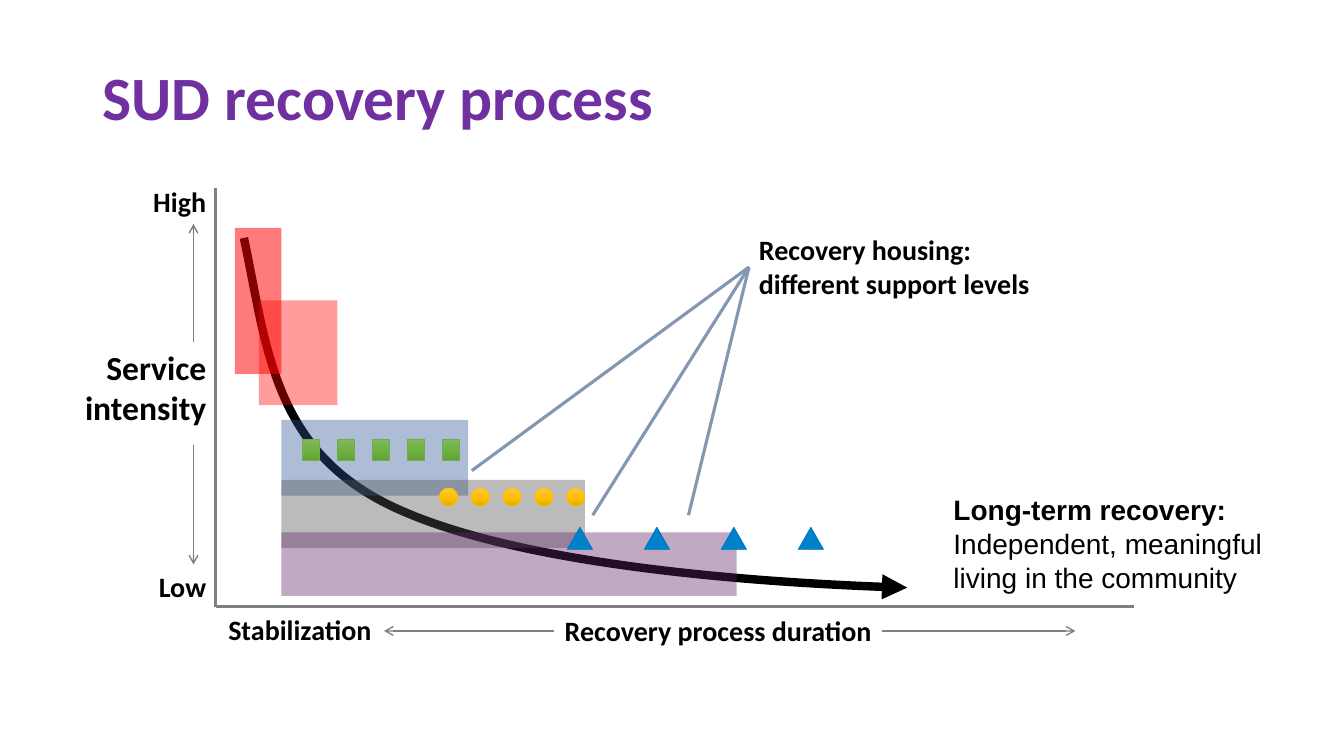
from dataclasses import dataclass
from lxml.etree import SubElement as Sub
from copy import deepcopy
from pptx import Presentation
from pptx.dml.color import RGBColor as RGB
from pptx.enum.shapes import MSO_CONNECTOR as Conn, MSO_SHAPE as Kind
from pptx.enum.text import MSO_ANCHOR as Anchor, PP_ALIGN as Align
from pptx.oxml.ns import qn
from pptx.util import Pt


@dataclass(frozen=True)
class Theme:
    font: str = "Calibri"
    plain: str = "Arial"
    head: int = 44
    large: int = 24
    base: int = 20
    title: str = "7030A0"
    ink: str = "000000"
    axis: str = "808080"
    link: str = "8497B0"
    red: str = "FF0000"
    blue: str = "2F5597"
    gray: str = "525252"
    plum: str = "632466"
    green: tuple = ("81B861", "6FB242", "62A336")
    gold: tuple = ("FFC64B", "FFC000", "E3AB00")
    sky: tuple = ("0082CA",)
    rims: tuple = ("70AD47", "FFC000", "0070C0")


def write(para, text, size, color, font, bold=True, align=Align.LEFT):
    """Put one formatted run into a paragraph."""
    para.alignment = align
    run = para.add_run()
    run.text = text
    face = run.font
    face.name, face.size, face.bold = font, Pt(size), bold
    face.color.rgb = RGB.from_string(color)


class Board:
    def __init__(self, slide, theme):
        self.slide, self.theme = slide, theme
        self.shapes = slide.shapes

    def title(self, text, x, y, w, h):
        box = self.shapes.title
        box.left, box.top, box.width, box.height = map(Pt, (x, y, w, h))
        frame = box.text_frame
        frame.vertical_anchor = Anchor.MIDDLE
        para = frame.paragraphs[0]
        para.line_spacing = 0.9
        write(para, text, self.theme.head, self.theme.title, self.theme.font)

    def label(self, lines, x, y, w, h, size=None, font=None, align=Align.LEFT):
        """Text box; the first line is bold, any later one is regular."""
        frame = self.shapes.add_textbox(*map(Pt, (x, y, w, h))).text_frame
        frame.word_wrap = True
        for i, text in enumerate(lines):
            para = frame.add_paragraph() if i else frame.paragraphs[0]
            write(para, text, size or self.theme.base, self.theme.ink,
                  font or self.theme.font, bold=i == 0, align=align)

    def stroke(self, shape, color, width, tip=None):
        shape.line.color.rgb = RGB.from_string(color)
        shape.line.width = Pt(width)
        if tip:
            Sub(shape._element.spPr.find(qn("a:ln")), qn("a:tailEnd"), type=tip)

    def line(self, start, end, color, width, tip=None):
        link = self.shapes.add_connector(Conn.STRAIGHT, *map(Pt, start + end))
        self.stroke(link, color, width, tip)
        Sub(link._element.spPr, qn("a:effectLst"))

    def curve(self, points, color, width, tip):
        first, *rest = [(Pt(x), Pt(y)) for x, y in points]
        pen = self.shapes.build_freeform(*first, scale=1.0)
        pen.add_line_segments(rest, close=False)
        shape = pen.convert_to_shape()
        shape.shadow.inherit = False
        shape.fill.background()
        self.stroke(shape, color, width, tip)
        # Each three straight segments become one cubic segment
        track = shape._element.spPr.find(".//" + qn("a:path"))
        legs = track.findall(qn("a:lnTo"))
        for i in range(0, len(legs), 3):
            cubic = Sub(track, qn("a:cubicBezTo"))
            for leg in legs[i:i + 3]:
                cubic.append(leg[0])
                track.remove(leg)

    def band(self, x, y, w, h, color, alpha=39):
        box = self.shapes.add_shape(Kind.RECTANGLE, *map(Pt, (x, y, w, h)))
        box.shadow.inherit = False
        box.line.fill.background()
        box.fill.solid()
        box.fill.fore_color.rgb = RGB.from_string(color)
        tint = box._element.spPr.find(".//" + qn("a:srgbClr"))
        Sub(tint, qn("a:alpha"), val=str(alpha * 1000))

    def marks(self, kind, count, x, y, w, h, step, fill, rim):
        """Group of equally spaced marks."""
        group = self.shapes.add_group_shape()
        for i in range(count):
            mark = group.shapes.add_shape(
                kind, *map(Pt, (x + i * step, y, w, h)))
            mark.shadow.inherit = False
            self.paint(mark, fill)
            self.stroke(mark, rim, 0.5)

    def paint(self, shape, colors):
        """Solid fill for one colour, top-down gradient for three."""
        if len(colors) == 1:
            shape.fill.solid()
            shape.fill.fore_color.rgb = RGB.from_string(colors[0])
            return
        shape.fill.gradient()
        shape.fill.gradient_angle = 270
        stops = shape._element.spPr.find(".//" + qn("a:gsLst"))
        stops.insert(1, deepcopy(stops[0]))
        for i, stop in enumerate(shape.fill.gradient_stops):
            stop.position = i / 2
            stop.color.rgb = RGB.from_string(colors[i])


def main():
    deck = Presentation()
    deck.slide_width, deck.slide_height = Pt(960), Pt(540)
    look = Theme()
    board = Board(deck.slides.add_slide(deck.slide_layouts[5]), look)

    # Title and outcome
    board.title("SUD recovery process", 66, 10, 828, 123)
    board.label(["Long-term recovery:",
                 "Independent, meaningful living in the community"],
                674, 348.5, 272, 80, font=look.plain)

    # Recovery curve
    board.curve([(174.2, 170), (190, 243.4), (193.7, 316), (272.2, 357.8),
                 (351.4, 399.6), (525.6, 416.2), (648, 419.8)],
                look.ink, 6, "triangle")

    # Axes
    base = (154.2, 433.4)
    for end in ((154.2, 134.6), (810, 433.4)):
        board.line(base, end, look.axis, 2.25)

    # Service bands
    for band in ((185, 214.6, 56, 74.8, look.red),
                 (201, 300, 133.3, 54, look.blue),
                 (201, 342.8, 216.7, 48.5, look.gray),
                 (201, 380.2, 325.2, 45.5, look.plum),
                 (167.8, 162.7, 33.2, 104.3, look.red, 52)):
        board.band(*band)

    # Axis labels
    board.label(["Service intensity"], 46, 244, 108.5, 68,
                size=look.large, align=Align.RIGHT)
    for text, y in (("High", 128.2), ("Low", 403.2)):
        board.label([text], 94.3, y, 60, 31.5, align=Align.RIGHT)
    board.label(["Recovery process duration"], 317.5, 434.8, 391, 31.5,
                align=Align.CENTER)
    board.label(["Stabilization"], 147.6, 433.6, 133.2, 31.5,
                align=Align.CENTER)

    # Housing callout
    board.label(["Recovery housing: different support levels"],
                535, 162.7, 209.5, 55.5)
    for end in ((491.8, 368), (337, 336.2), (423.4, 368)):
        board.line((535, 190.8), end, look.link, 2.25)

    # Direction arrows
    for start, end in (((138.2, 244), (138.2, 160)),
                       ((138.2, 318.2), (138.2, 403.2)),
                       ((396, 450.7), (274.3, 450.7)),
                       ((630, 450.7), (768.2, 450.7))):
        board.line(start, end, look.axis, 1, "arrow")

    # Support levels
    green, gold, sky = look.rims
    board.marks(Kind.RECTANGLE, 5, 216, 314, 12.2, 15, 25.05, look.green, green)
    board.marks(Kind.OVAL, 5, 313.9, 348.5, 13, 13, 22.7, look.gold, gold)
    board.marks(Kind.ISOSCELES_TRIANGLE, 4, 405.2, 376.6, 18, 15.8, 55,
                look.sky, sky)

    deck.save("out.pptx")


if __name__ == "__main__":
    main()
